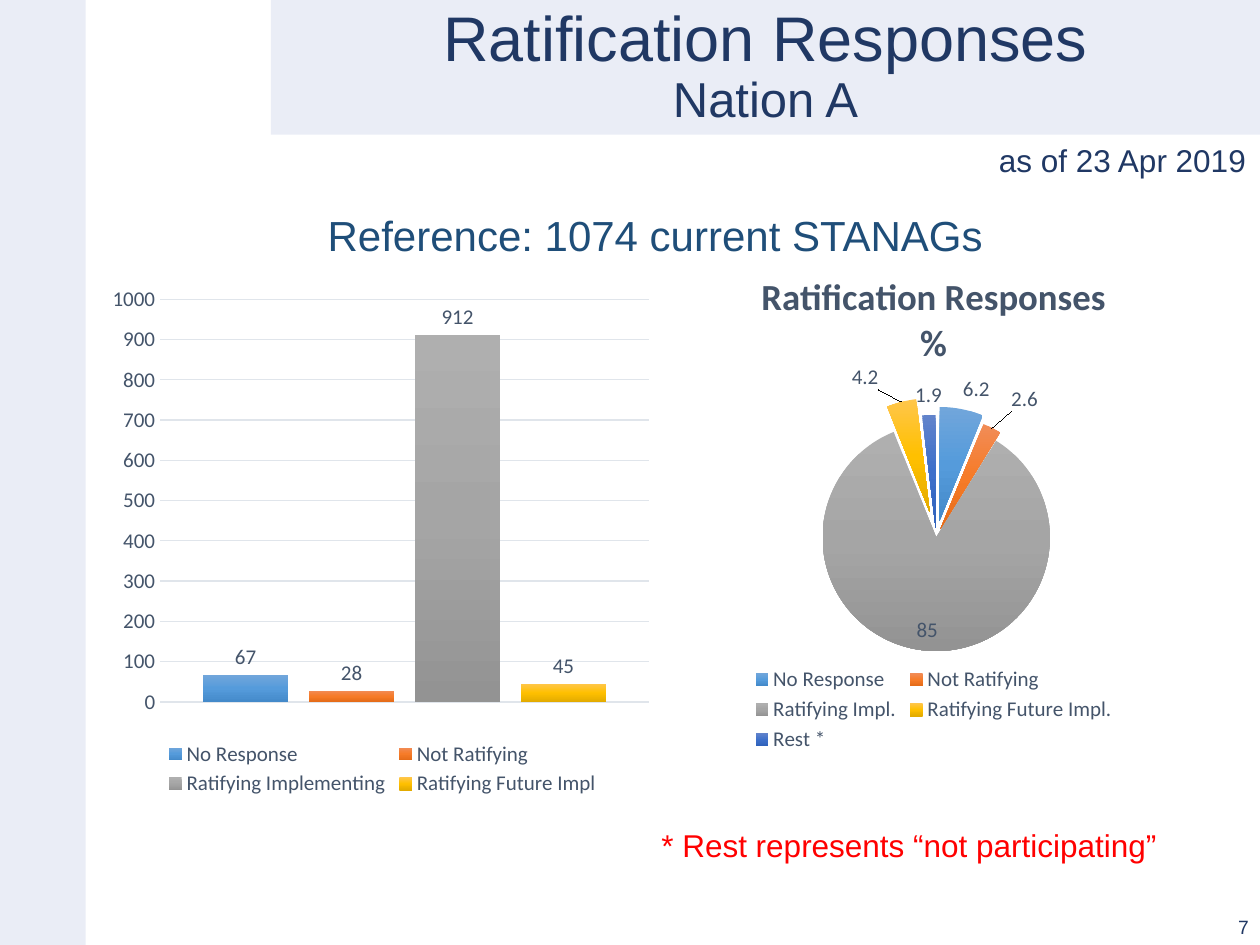
from lxml import etree
from pptx import Presentation
from pptx.chart.data import CategoryChartData
from pptx.dml.color import RGBColor
from pptx.enum.chart import XL_CHART_TYPE, XL_LABEL_POSITION, XL_LEGEND_POSITION, XL_TICK_MARK
from pptx.enum.shapes import MSO_SHAPE
from pptx.enum.text import MSO_ANCHOR, PP_ALIGN
from pptx.oxml.ns import qn
from pptx.util import Inches, Pt

COLUMN, PIE = XL_CHART_TYPE.COLUMN_CLUSTERED, XL_CHART_TYPE.PIE
OUTSIDE, INSIDE = XL_LABEL_POSITION.OUTSIDE_END, XL_LABEL_POSITION.INSIDE_END
BOTTOM, NO_TICK = XL_LEGEND_POSITION.BOTTOM, XL_TICK_MARK.NONE
RECTANGLE = MSO_SHAPE.RECTANGLE
LEFT, CENTER, RIGHT = PP_ALIGN.LEFT, PP_ALIGN.CENTER, PP_ALIGN.RIGHT
TOP, MIDDLE, LOW = MSO_ANCHOR.TOP, MSO_ANCHOR.MIDDLE, MSO_ANCHOR.BOTTOM

COLORS = {"band": "EAEDF6", "navy": "203864", "blue": "1F4E79", "red": "FF0000",
          "slate": "44546A", "grid": "E0E5EB"}
GRADIENTS = {
    "blue": ("71A6DB", "559BDB", "448ACA"),
    "orange": ("F18C57", "F67B28", "E56C19"),
    "gray": ("AFAFAF", "A5A5A5", "939393"),
    "gold": ("FFC64B", "FFC000", "E3AB00"),
    "indigo": ("6183CB", "3E70CA", "3062BB"),
}
RESPONSES = [
    ("No Response", 67, "blue"),
    ("Not Ratifying", 28, "orange"),
    ("Ratifying Implementing", 912, "gray"),
    ("Ratifying Future Impl", 45, "gold"),
]
SHARES = [
    ("No Response", 6.2, "blue", 15, None),
    ("Not Ratifying", 2.6, "orange", 8, (0.03, -0.02)),
    ("Ratifying Impl.", 85, "gray", 0, None),
    ("Ratifying Future Impl.", 4.2, "gold", 23, (-0.04, -0.01)),
    ("Rest *", 1.9, "indigo", 8, None),
]


def rgb(name):
    """Return the named colour."""
    return RGBColor.from_string(COLORS[name])


def style_font(font, size, color, name="Arial", bold=False):
    """Set the format values of a font."""
    for key, value in {"size": Pt(size), "name": name, "bold": bold}.items():
        setattr(font, key, value)
    font.color.rgb = rgb(color)


def add_band(page, box):
    """Add a pale rectangle."""
    band = page.shapes.add_shape(RECTANGLE, *map(Inches, box))
    band.shadow.inherit = False
    band.fill.solid()
    band.fill.fore_color.rgb = rgb("band")
    band.line.fill.background()


def add_text(page, box, lines, color, align=LEFT, anchor=TOP, wrap=True):
    """Add a paragraph whose lines are pairs of text and size."""
    frame = page.shapes.add_textbox(*map(Inches, box)).text_frame
    for key, value in {"word_wrap": wrap, "vertical_anchor": anchor}.items():
        setattr(frame, key, value)
    para = frame.paragraphs[0]
    para.alignment = align
    for index, (text, size) in enumerate(lines):
        if index:
            para.add_line_break()
        span = para.add_run()
        span.text = text
        style_font(span.font, size, color)
    return para


def add_child(parent, tag, **attributes):
    """Append an XML element with the given attributes."""
    return etree.SubElement(parent, qn(tag), {key: str(value) for key, value in attributes.items()})


def make_layout(**places):
    """Return a manual chart layout."""
    layout = etree.Element(qn("c:layout"))
    manual = add_child(layout, "c:manualLayout")
    for key, value in places.items():
        add_child(manual, f"c:{key}", val=value)
    return layout


def place_plot(chart, left, top, width, height):
    """Set the inner plot area as fractions of the chart."""
    area = chart.element.find(".//" + qn("c:plotArea"))
    for old in area.findall(qn("c:layout")):
        area.remove(old)
    area.insert(0, make_layout(layoutTarget="inner", xMode="edge", yMode="edge",
                               x=left, y=top, w=width, h=height))


def fill_gradient(part, name):
    """Fill a shape properties element with a vertical gradient."""
    part.remove(part.find(qn("a:noFill")))
    gradient = etree.Element(qn("a:gradFill"), rotWithShape="1")
    stops = add_child(gradient, "a:gsLst")
    for index, color in enumerate(GRADIENTS[name]):
        add_child(add_child(stops, "a:gs", pos=index * 50000), "a:srgbClr", val=color)
    add_child(gradient, "a:lin", ang=5400000, scaled=0)
    part.insert(0, gradient)


def clear_format(item):
    """Remove the fill and outline of a series or point."""
    item.format.fill.background()
    item.format.line.fill.background()


def add_chart(page, box, kind, data):
    """Add a chart with a legend at the bottom."""
    chart = page.shapes.add_chart(kind, *map(Inches, box), data).chart
    style_font(chart.font, 12, "slate", "Calibri")
    chart.has_legend = True
    chart.legend.position = BOTTOM
    chart.legend.include_in_layout = False
    style_font(chart.legend.font, 12, "slate", "Calibri")
    return chart


def show_values(labels):
    """Show values outside the ends of the data shapes."""
    for key, value in {"show_value": True, "show_percentage": False, "position": OUTSIDE}.items():
        setattr(labels, key, value)
    style_font(labels.font, 12, "slate", "Calibri")


def add_response_columns(page, box):
    """Add the column chart of response counts."""
    data = CategoryChartData()
    data.categories = ["1"]
    for name, count, _ in RESPONSES:
        data.add_series(name, [count])
    chart = add_chart(page, box, COLUMN, data)
    chart.has_title = False
    place_plot(chart, 0.1, 0.04, 0.88, 0.77)
    plot = chart.plots[0]
    for key, value in {"gap_width": 100, "overlap": -24, "vary_by_categories": False}.items():
        setattr(plot, key, value)
    chart.category_axis.visible = False
    axis = chart.value_axis
    for key, value in {"minimum_scale": 0, "maximum_scale": 1000, "major_unit": 100,
                       "major_tick_mark": NO_TICK, "minor_tick_mark": NO_TICK}.items():
        setattr(axis, key, value)
    axis.format.line.fill.background()
    axis.major_gridlines.format.line.color.rgb = rgb("grid")
    axis.major_gridlines.format.line.width = Pt(0.75)
    style_font(axis.tick_labels.font, 12, "slate", "Calibri")
    for series in plot.series:
        clear_format(series)
        show_values(series.data_labels)
    for part, (_, _, color) in zip(chart.element.xpath(".//c:ser/c:spPr"), RESPONSES):
        fill_gradient(part, color)


def add_share_pie(page, box):
    """Add the exploded pie chart of response percentages."""
    data = CategoryChartData()
    data.categories = [share[0] for share in SHARES]
    data.add_series("Series 1", [share[1] for share in SHARES])
    chart = add_chart(page, box, PIE, data)
    chart.has_title = True
    frame = chart.chart_title.text_frame
    frame.text = "Ratification Responses\n%"
    for para in frame.paragraphs:
        style_font(para.runs[0].font, 21, "slate", "Calibri", True)
    place_plot(chart, 0.29, 0.34, 0.43, 0.45)
    plot = chart.plots[0]
    plot.vary_by_categories = True
    series = plot.series[0]
    show_values(series.data_labels)
    for index, (_, _, _, _, shift) in enumerate(SHARES):
        point = series.points[index]
        clear_format(point)
        label = point.data_label
        style_font(label.font, 12, "slate", "Calibri")
        label.position = OUTSIDE if index != 2 else INSIDE
        if shift:
            chart.element.xpath(f".//c:dLbl/c:idx[@val='{index}']")[0].addnext(
                make_layout(x=shift[0], y=shift[1]))
    for part, (_, _, color, explosion, _) in zip(chart.element.xpath(".//c:dPt/c:spPr"), SHARES):
        fill_gradient(part, color)
        part.addprevious(etree.Element(qn("c:explosion"), val=str(explosion)))


def main():
    """Build and save the slide."""
    deck = Presentation()
    deck.slide_width, deck.slide_height = Inches(10), Inches(7.5)
    page = deck.slides.add_slide(deck.slide_layouts[6])
    header = (2.15, 0, 7.85, 1.07)
    add_band(page, (0, 0, 0.68, 7.5))
    add_band(page, header)
    title = add_text(page, header, [("Ratification Responses", 36), ("Nation A", 28)],
                     "navy", CENTER, MIDDLE)
    title.line_spacing = 0.9
    add_response_columns(page, (0.83, 2.21, 4.41, 4.15))
    add_text(page, (2.01, 1.61, 6.38, 0.5), [("Reference: 1074 current STANAGs", 24)], "blue", CENTER)
    add_share_pie(page, (5.31, 2, 4.2, 4.01))
    add_text(page, (5.15, 6.51, 4.52, 0.4), [("* Rest represents “not participating”", 18)], "red")
    add_text(page, (7.83, 1.07, 2.18, 0.4), [("as of 23 Apr 2019", 18)], "navy", wrap=False)
    add_text(page, (7.76, 7.1, 2.25, 0.4), [("7", 11)], "navy", RIGHT, LOW)
    deck.save("out.pptx")


if __name__ == "__main__":
    main()
